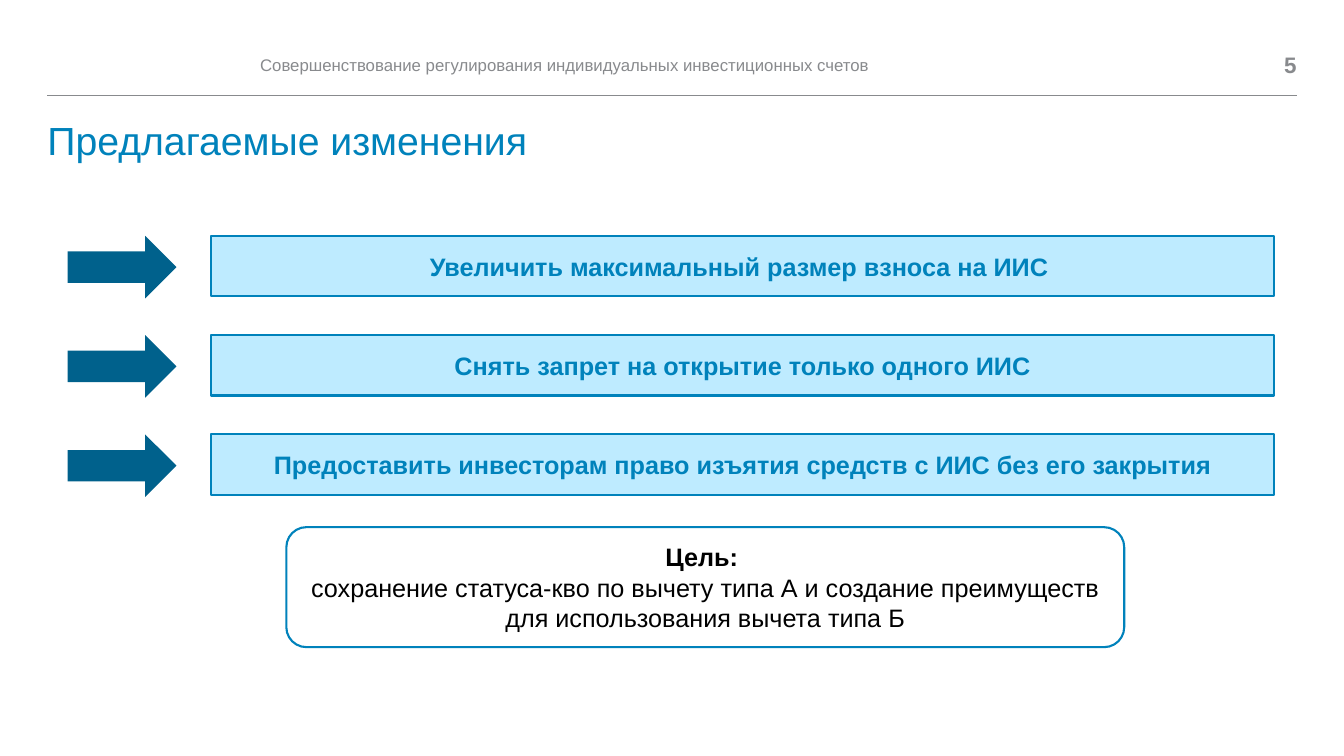
from dataclasses import dataclass

from lxml import etree
from pptx import Presentation
from pptx.dml.color import RGBColor
from pptx.enum.shapes import MSO_CONNECTOR, MSO_SHAPE
from pptx.enum.text import MSO_ANCHOR, MSO_AUTO_SIZE, PP_ALIGN
from pptx.oxml.ns import qn
from pptx.util import Inches, Pt

STRAIGHT = MSO_CONNECTOR.STRAIGHT
RECTANGLE = MSO_SHAPE.RECTANGLE
ROUNDED = MSO_SHAPE.ROUNDED_RECTANGLE
ARROW = MSO_SHAPE.RIGHT_ARROW
TOP, MIDDLE = MSO_ANCHOR.TOP, MSO_ANCHOR.MIDDLE
LEFT, CENTER, RIGHT = PP_ALIGN.LEFT, PP_ALIGN.CENTER, PP_ALIGN.RIGHT
NO_AUTOFIT = MSO_AUTO_SIZE.NONE


@dataclass(frozen=True)
class Theme:
    """Colours, font and type sizes of the slide."""
    font: str = "Arial"
    blue: RGBColor = RGBColor(0x00, 0x82, 0xBB)
    dark_blue: RGBColor = RGBColor(0x00, 0x61, 0x8C)
    pale_blue: RGBColor = RGBColor(0xBE, 0xEB, 0xFF)
    grey: RGBColor = RGBColor(0x88, 0x8A, 0x8D)
    black: RGBColor = RGBColor(0x00, 0x00, 0x00)
    white: RGBColor = RGBColor(0xFF, 0xFF, 0xFF)
    title_size: int = 28
    body_size: int = 18
    number_size: int = 16
    header_size: int = 12
    outline: float = 1.5
    rule: float = 0.5


THEME = Theme()

MARGIN, CONTENT_WIDTH = 0.47, 12.39
CHANGES = (
    "Увеличить максимальный размер взноса на ИИС ",
    "Снять запрет на открытие только одного ИИС",
    "Предоставить инвесторам право изъятия средств с ИИС без его закрытия",
)
GOAL = (
    ("Цель: ", True),
    ("сохранение статуса-кво по вычету типа А и создание преимуществ "
     "для использования вычета типа Б", False),
)


def write(frame, lines, size, color, align=LEFT, anchor=MIDDLE):
    """Fill a text frame with one paragraph per (text, bold) line."""
    frame.word_wrap = True
    frame.auto_size = NO_AUTOFIT
    frame.vertical_anchor = anchor
    for index, (text, bold) in enumerate(lines):
        paragraph = frame.add_paragraph() if index else frame.paragraphs[0]
        paragraph.alignment = align
        run = paragraph.add_run()
        run.text = text
        run.font.name = THEME.font
        run.font.size = Pt(size)
        run.font.bold = bold
        run.font.color.rgb = color


def remove_insets(frame):
    """Let text reach the edges of its box."""
    frame.margin_left = frame.margin_right = 0
    frame.margin_top = frame.margin_bottom = 0


def add_label(slide, box, text, size, bold=False, align=LEFT):
    """Add a grey header label."""
    frame = slide.shapes.add_textbox(*map(Inches, box)).text_frame
    remove_insets(frame)
    write(frame, [(text, bold)], size, THEME.grey, align)


def add_panel(slide, kind, box, fill, outline=None):
    """Add a flat shape, outlined if a colour is given."""
    panel = slide.shapes.add_shape(kind, *map(Inches, box))
    panel.shadow.inherit = False
    panel.fill.solid()
    panel.fill.fore_color.rgb = fill
    if outline is None:
        panel.line.fill.background()
    else:
        panel.line.color.rgb = outline
        panel.line.width = Pt(THEME.outline)
    return panel


def add_header(slide, box):
    """Place the topic, page number and rule in the header box."""
    left, top, width, height = box
    label_height, number_width = 0.35, 0.81
    right, bottom = left + width, top + height
    rule = slide.shapes.add_connector(
        STRAIGHT, Inches(left), Inches(bottom), Inches(right), Inches(bottom))
    rule.line.color.rgb = THEME.grey
    rule.line.width = Pt(THEME.rule)
    etree.SubElement(rule.line._get_or_add_ln().getparent(), qn("a:effectLst"))
    add_label(slide, (left + 2.11, top, 9.23, label_height),
              "Совершенствование регулирования индивидуальных инвестиционных счетов",
              THEME.header_size)
    add_label(slide, (right - number_width, top, number_width, label_height),
              "5", THEME.number_size, True, RIGHT)


def add_title(slide, box):
    """Move and fill the title placeholder."""
    title = slide.shapes.title
    title.left, title.top, title.width, title.height = map(Inches, box)
    remove_insets(title.text_frame)
    write(title.text_frame, [("Предлагаемые изменения", False)],
          THEME.title_size, THEME.blue, anchor=TOP)
    title.text_frame.paragraphs[0].line_spacing = 0.9


def add_changes(slide, box):
    """Stack the proposed changes, each with an arrow on its left."""
    left, top, width, height = box
    bar_offset, bar_height = 1.42, 0.6
    arrow_width, arrow_height = 1.08, 0.62
    pitch = (height - bar_height) / (len(CHANGES) - 1)
    for index, change in enumerate(CHANGES):
        row_top = top + index * pitch
        bar = add_panel(
            slide, RECTANGLE,
            (left + bar_offset, row_top, width - bar_offset, bar_height),
            THEME.pale_blue, THEME.blue)
        write(bar.text_frame, [(change, True)], THEME.body_size, THEME.blue, CENTER)
        add_panel(slide, ARROW, (left, row_top, arrow_width, arrow_height),
                  THEME.dark_blue)


def add_goal(slide, box):
    """Add the rounded box that states the goal."""
    goal = add_panel(slide, ROUNDED, box, THEME.white, THEME.blue)
    write(goal.text_frame, GOAL, THEME.body_size, THEME.black, CENTER)


def main():
    """Build and save the slide."""
    deck = Presentation()
    deck.slide_width, deck.slide_height = Inches(13.33), Inches(7.5)
    slide = deck.slides.add_slide(deck.slide_layouts.get_by_name("Title Only"))
    add_header(slide, (MARGIN, 0.47, CONTENT_WIDTH, 0.48))
    add_title(slide, (MARGIN, 1.21, CONTENT_WIDTH, 0.66))
    add_changes(slide, (0.67, 2.34, 11.97, 2.57))
    add_goal(slide, (2.84, 5.23, 8.31, 1.19))
    deck.save("out.pptx")


if __name__ == "__main__":
    main()
